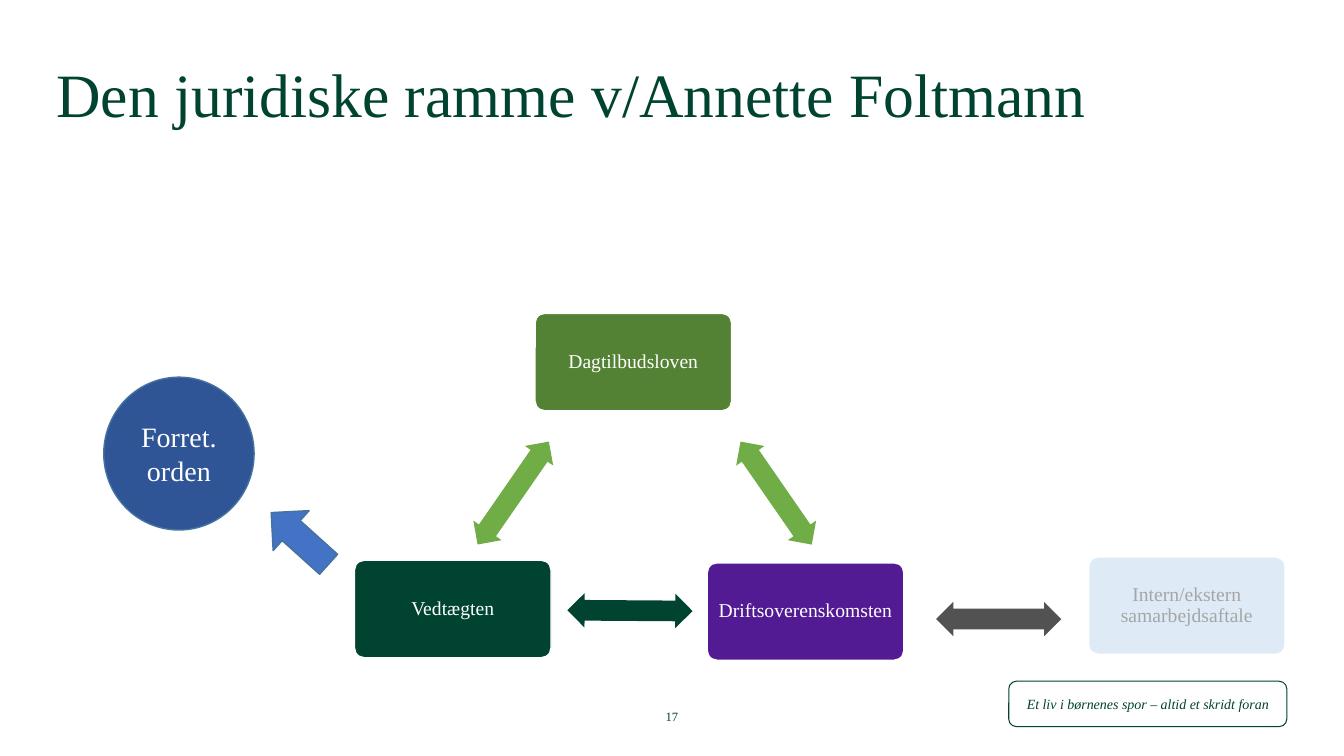
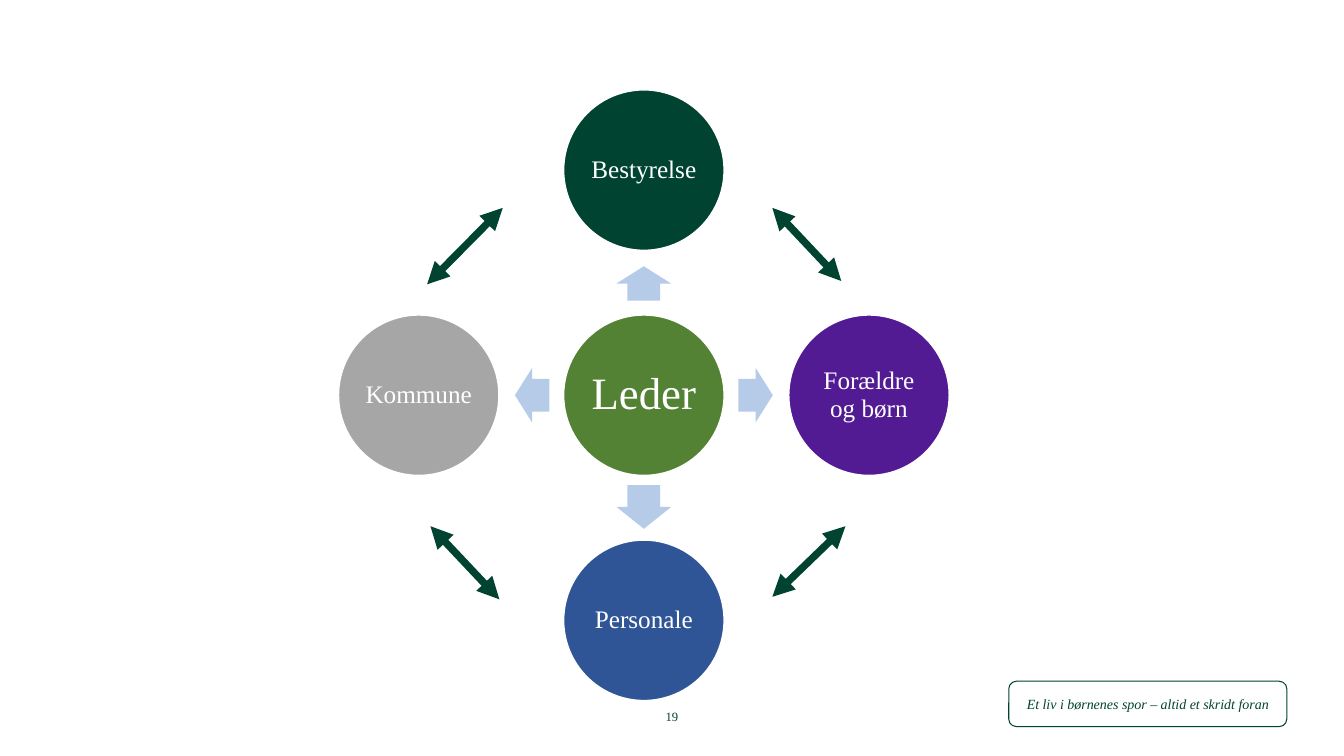
from dataclasses import dataclass
from math import cos, radians, sin

from lxml.etree import SubElement
from pptx import Presentation
from pptx.dml.color import RGBColor
from pptx.enum.shapes import MSO_CONNECTOR as Link, MSO_SHAPE as Shape
from pptx.enum.text import MSO_ANCHOR as Anchor, PP_ALIGN as Align
from pptx.oxml.ns import qn
from pptx.util import Inches, Pt

COLS, ROWS = 16, 9
CELL = Inches(7.5) / ROWS


@dataclass(frozen=True)
class Theme:
    """Colours, font and type sizes of the deck."""
    font: str = "Times New Roman"
    white: str = "FFFFFF"
    forest: str = "004330"
    moss: str = "548235"
    leaf: str = "70AD47"
    purple: str = "521B93"
    navy: str = "2F5597"
    blue: str = "4472C4"
    steel: str = "43739E"
    mist: str = "B5CBE7"
    ice: str = "DEEBF7"
    silver: str = "A5A5A5"
    grey: str = "A6A6A6"
    graphite: str = "525252"
    title: int = 44
    hub: int = 32
    order: int = 20
    circle: int = 18
    card: int = 14
    motto: int = 10
    number: int = 9


THEME = Theme()


@dataclass(frozen=True)
class Box:
    """An area measured in grid columns and rows."""
    x: float
    y: float
    w: float
    h: float

    def around(self, x, y, w, h):
        """Return a box centred on a point relative to this box."""
        return Box(self.x + x - w / 2, self.y + y - h / 2, w, h)

    def emu(self):
        """Return left, top, width and height in slide units."""
        return [round(value * CELL) for value in (self.x, self.y, self.w, self.h)]


TITLE = Box(0.67, 0.48, 14.64, 1.08)
NUMBER = Box(7.67, 8.33, 0.66, 0.29)
MOTTO = Box(12.01, 8.11, 3.31, 0.54)
FRAMEWORK = Box(1.24, 3.73, 14.06, 4.12)
WHEEL = Box(4.03, 1.07, 7.27, 7.27)


def rgb(code):
    """Turn a hex code into a colour."""
    return RGBColor.from_string(code)


def write(shape, text, size, colour, inset=0.0, align=Align.CENTER,
          anchor=Anchor.MIDDLE, spacing=0.9, italic=False):
    """Set one paragraph of text in a shape."""
    frame = shape.text_frame
    frame.word_wrap = True
    frame.vertical_anchor = anchor
    frame.margin_left = frame.margin_right = Inches(inset)
    frame.margin_top = frame.margin_bottom = Inches(inset)
    paragraph = frame.paragraphs[0]
    paragraph.alignment = align
    paragraph.line_spacing = spacing
    run = paragraph.add_run()
    run.text = text
    run.font.name = THEME.font
    run.font.size = Pt(size)
    run.font.italic = italic
    run.font.color.rgb = rgb(colour)


def draw(slide, kind, box, fill=None, line=None, weight=1, turn=0, adjust=()):
    """Add a preset shape with flat fill and outline."""
    shape = slide.shapes.add_shape(kind, *box.emu())
    shape.shadow.inherit = False
    shape.rotation = turn
    for index, value in enumerate(adjust):
        shape.adjustments[index] = value
    if fill:
        shape.fill.solid()
        shape.fill.fore_color.rgb = rgb(fill)
    else:
        shape.fill.background()
    if line:
        shape.line.color.rgb = rgb(line)
        shape.line.width = Pt(weight)
    else:
        shape.line.fill.background()
    return shape


def add_title(slide, box, text):
    """Place the slide title."""
    write(slide.shapes.add_textbox(*box.emu()), text, THEME.title, THEME.forest,
          align=Align.LEFT, anchor=Anchor.BOTTOM)


def add_number(slide, box, number):
    """Place the page number."""
    write(slide.shapes.add_textbox(*box.emu()), str(number), THEME.number,
          THEME.forest, anchor=Anchor.BOTTOM, spacing=1.0)


def add_motto(slide, box):
    """Place the framed motto."""
    frame = draw(slide, Shape.ROUNDED_RECTANGLE, box, line=THEME.forest, weight=0.75)
    write(frame, "Et liv i børnenes spor – altid et skridt foran", THEME.motto,
          THEME.forest, inset=0.08, spacing=1.0, italic=True)


def add_framework(slide, box):
    """Place the legal documents and the arrows between them."""
    cards = (
        ("Dagtilbudsloven", 6.30, 0.58, THEME.moss, THEME.white),
        ("Intern/ekstern samarbejdsaftale", 12.89, 3.48, THEME.ice, THEME.silver),
        ("Vedtægten", 4.15, 3.52, THEME.forest, THEME.white),
        ("Driftsoverenskomsten", 8.35, 3.55, THEME.purple, THEME.white),
    )
    for label, x, y, fill, ink in cards:
        card = draw(slide, Shape.ROUNDED_RECTANGLE, box.around(x, y, 2.34, 1.16),
                    fill, THEME.white, adjust=(0.1,))
        write(card, label, THEME.card, ink, inset=0.03)
    bridges = (
        (10.65, 3.64, 0, THEME.graphite),
        (6.26, 3.54, 0.4, THEME.forest),
        (8.00, 2.14, 235.3, THEME.leaf),
        (4.87, 2.14, 124.7, THEME.leaf),
    )
    for x, y, turn, fill in bridges:
        draw(slide, Shape.LEFT_RIGHT_ARROW, box.around(x, y, 1.49, 0.41), fill,
             turn=turn, adjust=(0.6, 0.5))
    order = draw(slide, Shape.OVAL, box.around(0.89, 1.67, 1.79, 1.82),
                 THEME.navy, THEME.steel)
    write(order, "Forret. orden", THEME.order, THEME.white, inset=0.08, spacing=1.0)
    draw(slide, Shape.DOWN_ARROW, box.around(2.33, 2.68, 0.64, 0.92),
         THEME.blue, THEME.steel, turn=132)


def add_circle(slide, box, label, fill, size):
    """Place one labelled circle of the wheel."""
    write(draw(slide, Shape.OVAL, box, fill, THEME.white), label, size,
          THEME.white, inset=0.03)


def add_link(slide, start, end):
    """Draw a thick line with a head at both ends."""
    points = [round(value * CELL) for value in (*start, *end)]
    link = slide.shapes.add_connector(Link.STRAIGHT, *points)
    link.line.color.rgb = rgb(THEME.forest)
    link.line.width = Pt(5.25)
    outline = link.line._get_or_add_ln()
    for tip in ("a:headEnd", "a:tailEnd"):
        SubElement(outline, qn(tip), type="triangle")
    SubElement(link._element.spPr, qn("a:effectLst"))


def add_wheel(slide, box):
    """Place the leader, the four parties around and their links."""
    diameter, reach, arrow_reach = 1.91, 2.68, 1.33
    mid_x, mid_y = box.w / 2, box.h / 2
    add_circle(slide, box.around(mid_x, mid_y, diameter, diameter), "Leder",
               THEME.moss, THEME.hub)
    parties = (
        ("Bestyrelse", THEME.forest, 270, 0.41),
        ("Forældre og børn", THEME.purple, 0, 0.41),
        ("Personale", THEME.navy, 90, 0.52),
        ("Kommune", THEME.grey, 180, 0.41),
    )
    for label, fill, angle, length in parties:
        dx, dy = cos(radians(angle)), sin(radians(angle))
        draw(slide, Shape.RIGHT_ARROW,
             box.around(mid_x + arrow_reach * dx, mid_y + arrow_reach * dy, length, 0.65),
             THEME.mist, turn=angle, adjust=(0.6, 0.5))
        add_circle(slide,
                   box.around(mid_x + reach * dx, mid_y + reach * dy, diameter, diameter),
                   label, fill, THEME.circle)
    links = (
        ((1.53, -2.23), (2.35, -1.36)),
        ((-1.68, -2.23), (-2.58, -1.32)),
        ((-2.54, 1.56), (-1.72, 2.43)),
        ((2.40, 1.56), (1.53, 2.40)),
    )
    for ends in links:
        add_link(slide, *((box.x + mid_x + x, box.y + mid_y + y) for x, y in ends))


def new_slide(deck, number):
    """Add a blank slide with the shared motto and page number."""
    slide = deck.slides.add_slide(deck.slide_layouts[6])
    add_motto(slide, MOTTO)
    add_number(slide, NUMBER, number)
    return slide


def main():
    """Build and save the deck."""
    deck = Presentation()
    deck.slide_width, deck.slide_height = round(COLS * CELL), round(ROWS * CELL)
    legal = new_slide(deck, 17)
    add_title(legal, TITLE, "Den juridiske ramme v/Annette Foltmann")
    add_framework(legal, FRAMEWORK)
    add_wheel(new_slide(deck, 19), WHEEL)
    deck.save("out.pptx")


if __name__ == "__main__":
    main()
